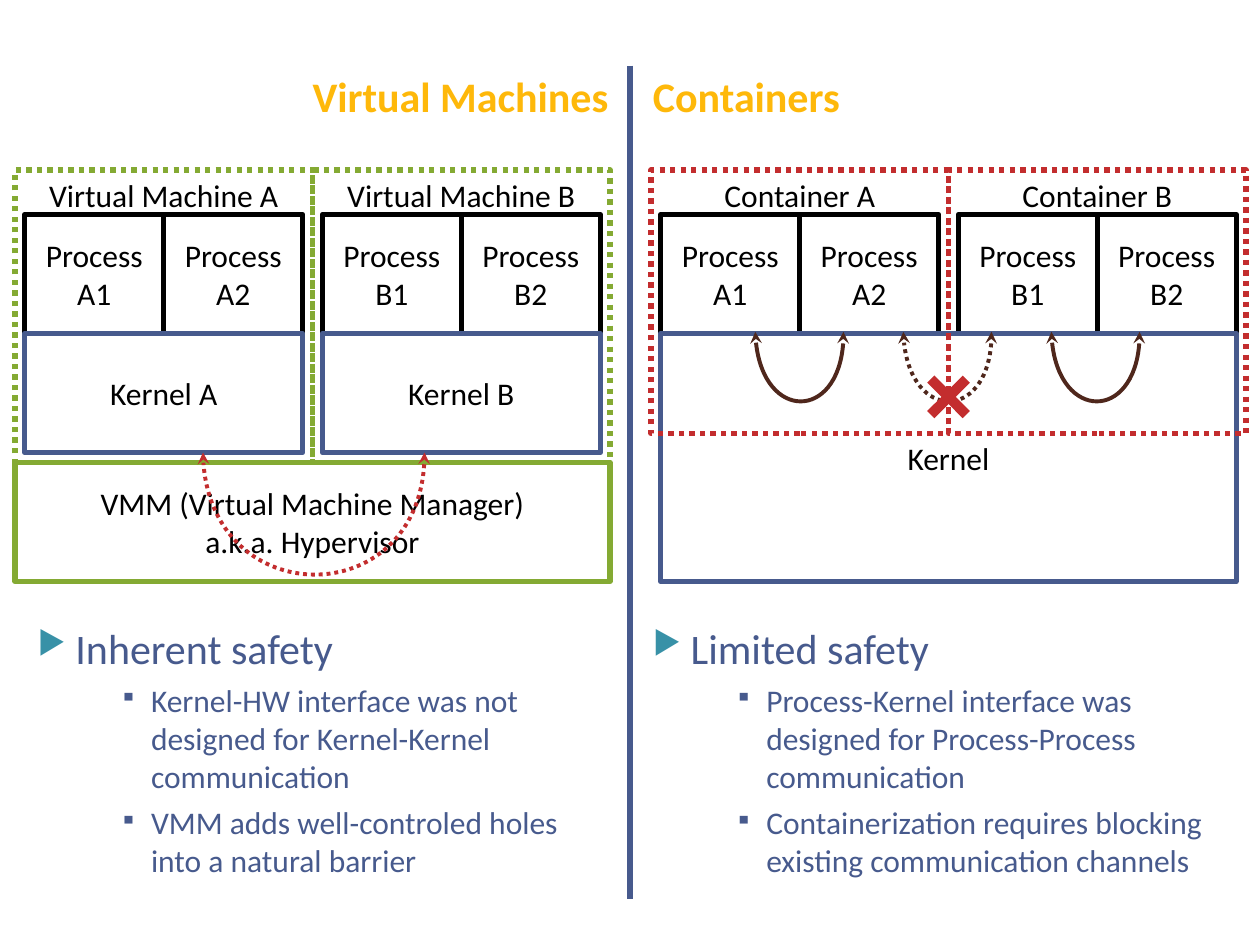
from lxml import etree
from pptx import Presentation
from pptx.dml.color import RGBColor
from pptx.enum import dml, shapes, text
from pptx.oxml import ns
from pptx.util import Pt

FONT = "Calibri"
COLORS = {
    "title": "FEB80A", "blue": "475A8D", "bullet": "3891A7", "black": "000000",
    "green": "84AA33", "red": "C32D2E", "brown": "4F271C",
}
FRAME_WIDTH = 170
PROCESS_WIDTH, PROCESS_HEIGHT = 79.4, 68
INSET = 5.6
PROCESS_TOP, KERNEL_TOP, MANAGER_TOP = 25.4, 93.4, 167


def rgb(name):
    """Return the named colour."""
    return RGBColor.from_string(COLORS[name])


def add_xml(parent, tag, **attributes):
    """Append a DrawingML element to a parent."""
    return etree.SubElement(parent, ns.qn(tag), attributes)


def set_font(paragraph, size, color, bold=False):
    """Set the font of a whole paragraph."""
    font = paragraph.font
    font.name, font.size, font.bold = FONT, Pt(size), bold
    font.color.rgb = rgb(color)


def style_outline(shape, color, width, dotted=False):
    """Give a shape an outline, no fill and no shadow."""
    shape.shadow.inherit = False
    shape.fill.background()
    shape.line.color.rgb = rgb(color)
    shape.line.width = Pt(width)
    if dotted:
        shape.line.dash_style = dml.MSO_LINE.ROUND_DOT


def add_box(slide, left, top, width, height, lines, color,
            dotted=False, anchor=text.MSO_ANCHOR.MIDDLE):
    """Add an outlined rectangle with centred text."""
    shape = slide.shapes.add_shape(
        shapes.MSO_SHAPE.RECTANGLE, Pt(left), Pt(top), Pt(width), Pt(height))
    style_outline(shape, color, 3, dotted)
    frame = shape.text_frame
    frame.word_wrap = True
    frame.vertical_anchor = anchor
    frame.text = lines
    for paragraph in frame.paragraphs:
        paragraph.alignment = text.PP_ALIGN.CENTER
        set_font(paragraph, 18, "black")


def add_processes(slide, left, top):
    """Add the two pairs of process boxes of a panel."""
    for group, letter in enumerate("AB"):
        for column in range(2):
            add_box(slide, left + INSET + group * FRAME_WIDTH + column * PROCESS_WIDTH,
                    top + PROCESS_TOP, PROCESS_WIDTH, PROCESS_HEIGHT,
                    f"Process {letter}{column + 1}", "black")


def add_frames(slide, left, top, height, label, color):
    """Add the two dotted frames of a panel."""
    for group, letter in enumerate("AB"):
        add_box(slide, left + group * FRAME_WIDTH, top, FRAME_WIDTH, height,
                f"{label} {letter}", color, True, text.MSO_ANCHOR.TOP)


def add_channel(slide, left, top, width, depth, color, dotted=False):
    """Add a U-shaped curve with an arrowhead at both ends."""
    right, bottom = left + width, top + depth
    builder = slide.shapes.build_freeform(Pt(right), Pt(top))
    builder.add_line_segments(
        [(Pt(x), Pt(y)) for x, y in ((right + 1, bottom), (left + 1, bottom), (left, top))],
        close=False)
    shape = builder.convert_to_shape()
    segments = shape._element.xpath(".//a:lnTo")
    curve = add_xml(segments[0].getparent(), "a:cubicBezTo")
    for segment in segments:
        curve.append(segment[0])
        segment.getparent().remove(segment)
    style_outline(shape, color, 2.25, dotted)
    outline = shape.line._get_or_add_ln()
    for end in ("a:headEnd", "a:tailEnd"):
        add_xml(outline, end, type="stealth")


def add_cross(slide, center_x, center_y, length, thickness):
    """Add a cross made of two rotated bars."""
    for angle in (45, 135):
        bar = slide.shapes.add_shape(
            shapes.MSO_SHAPE.RECTANGLE, Pt(center_x - length / 2),
            Pt(center_y - thickness / 2), Pt(length), Pt(thickness))
        bar.rotation = angle
        bar.shadow.inherit = False
        bar.fill.solid()
        bar.fill.fore_color.rgb = rgb("red")
        bar.line.fill.background()


def add_machines_panel(slide, left, top):
    """Draw virtual machines above their manager."""
    add_processes(slide, left, top)
    add_frames(slide, left, top, MANAGER_TOP, "Virtual Machine", "green")
    for group, letter in enumerate("AB"):
        add_box(slide, left + INSET + group * FRAME_WIDTH, top + KERNEL_TOP,
                2 * PROCESS_WIDTH, PROCESS_HEIGHT, f"Kernel {letter}", "blue")
    add_box(slide, left, top + MANAGER_TOP, 2 * FRAME_WIDTH, PROCESS_HEIGHT,
            "VMM (Virtual Machine Manager)\na.k.a. Hypervisor", "green")
    add_channel(slide, left + 107.4, top + 161.4, 126.6, 91, "red", True)


def add_containers_panel(slide, left, top):
    """Draw containers that share one kernel."""
    add_processes(slide, left, top)
    add_box(slide, left + INSET, top + KERNEL_TOP, FRAME_WIDTH + 2 * PROCESS_WIDTH,
            141.6, "Kernel", "blue")
    add_frames(slide, left, top, 150.5, "Container", "red")
    for index in range(3):
        add_channel(slide, left + 59.6 + 84.6 * index, top + 92.4, 50.4, 51,
                    "brown", index == 1)
    add_cross(slide, left + FRAME_WIDTH, top + 129.6, 28.8, 5.8)


def add_heading(slide, left, top, width, height, heading, alignment):
    """Add a column heading."""
    frame = slide.shapes.add_textbox(Pt(left), Pt(top), Pt(width), Pt(height)).text_frame
    frame.word_wrap = True
    frame.vertical_anchor = text.MSO_ANCHOR.BOTTOM
    frame.margin_top, frame.margin_bottom = 0, Pt(2)
    paragraph = frame.paragraphs[0]
    paragraph.text = heading
    paragraph.alignment = alignment
    set_font(paragraph, 24, "title", True)


def set_bullet(paragraph, character, color, margin, hanging):
    """Give a paragraph a coloured bullet and a hanging indent."""
    properties = paragraph._p.get_or_add_pPr()
    properties.set("marL", str(Pt(margin)))
    properties.set("indent", str(-Pt(hanging)))
    add_xml(add_xml(properties, "a:buClr"), "a:srgbClr", val=COLORS[color])
    add_xml(properties, "a:buSzPct", val="76000")
    add_xml(properties, "a:buChar", char=character)


def add_notes_column(slide, left, top, width, height, headline, points):
    """Add a bulleted headline with its points."""
    frame = slide.shapes.add_textbox(Pt(left), Pt(top), Pt(width), Pt(height)).text_frame
    frame.word_wrap = True
    for index, line in enumerate([headline, *points]):
        paragraph = frame.add_paragraph() if index else frame.paragraphs[0]
        paragraph.text = line
        paragraph.space_before = Pt(5 if index else 6)
        if index:
            paragraph.level = 1
            set_bullet(paragraph, "▪", "blue", 64.8, 18)
        else:
            set_bullet(paragraph, "▶", "bullet", 21.6, 21.6)
        set_font(paragraph, 18 if index else 24, "blue")


def add_divider(slide, x, top, bottom):
    """Add the vertical line between the columns."""
    line = slide.shapes.add_connector(
        shapes.MSO_CONNECTOR.STRAIGHT, Pt(x), Pt(top), Pt(x), Pt(bottom))
    line.line.color.rgb = rgb("blue")
    line.line.width = Pt(4)
    add_xml(line._element.spPr, "a:effectLst")


def main():
    """Build the comparison slide."""
    presentation = Presentation()
    presentation.slide_width, presentation.slide_height = Pt(720), Pt(540)
    slide = presentation.slides.add_slide(presentation.slide_layouts[6])
    add_divider(slide, 360, 37.5, 514)
    columns = (
        (14.4, 340.4, "Virtual Machines", text.PP_ALIGN.RIGHT, "Inherent safety",
         ["Kernel-HW interface was not designed for Kernel-Kernel communication",
          "VMM adds well-controled holes into a natural barrier"]),
        (366, 345.6, "Containers", text.PP_ALIGN.LEFT, "Limited safety",
         ["Process-Kernel interface was designed for Process-Process communication",
          "Containerization requires blocking existing communication channels"]),
    )
    for left, width, heading, alignment, headline, points in columns:
        add_heading(slide, left, 43.2, width, 28, heading, alignment)
        add_notes_column(slide, left, 352, width, 161.3, headline, points)
    add_machines_panel(slide, 8.6, 97.2)
    add_containers_panel(slide, 372, 97.2)
    presentation.save("out.pptx")


if __name__ == "__main__":
    main()
